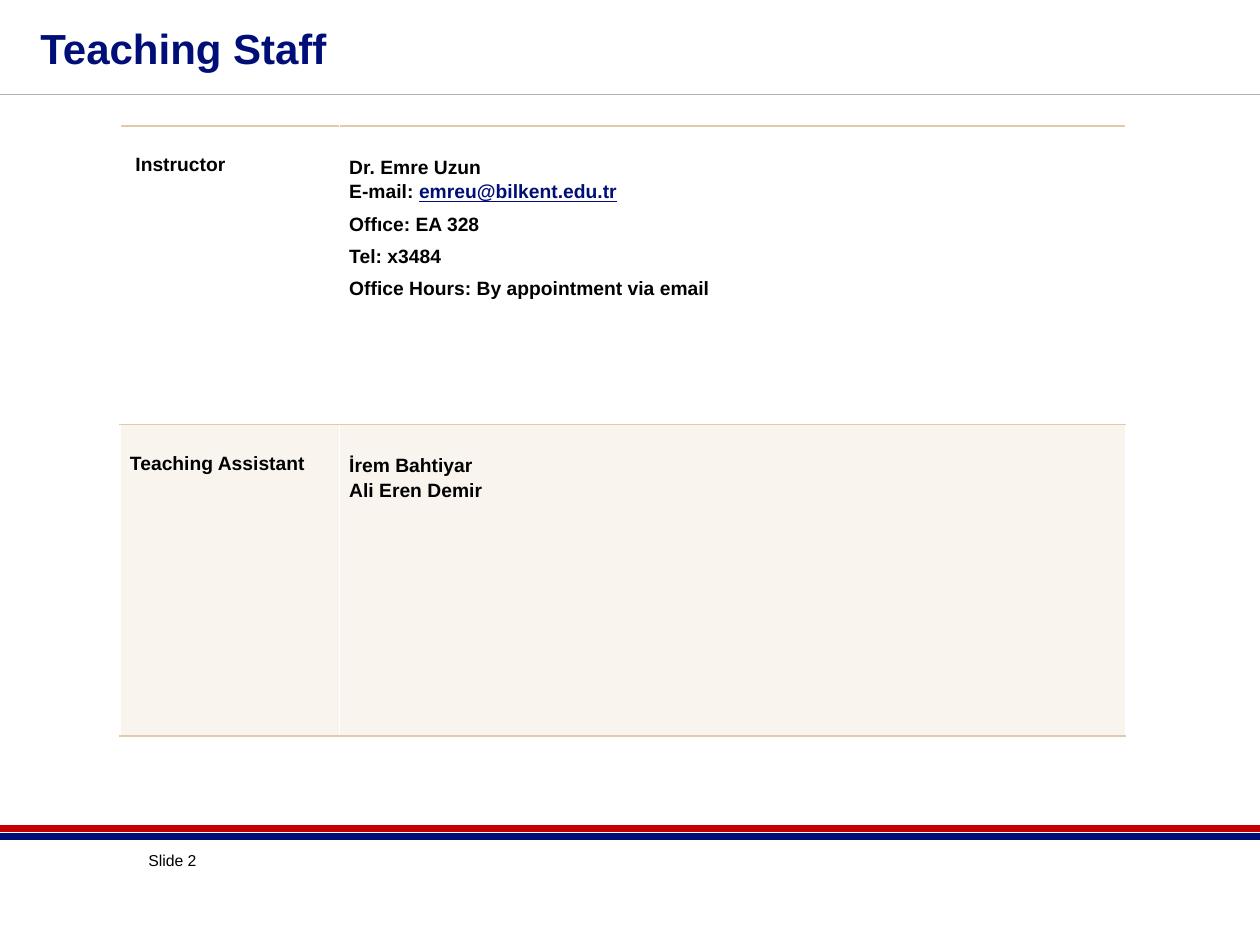
"""Build the teaching staff slide."""
from dataclasses import dataclass
from typing import NamedTuple

from lxml.etree import SubElement as Sub
from pptx import Presentation
from pptx.dml.color import RGBColor as Rgb
from pptx.enum.shapes import MSO_CONNECTOR as Link
from pptx.enum.text import MSO_ANCHOR as Anchor, PP_ALIGN as Align
from pptx.oxml.ns import qn
from pptx.util import Cm, Pt


@dataclass(frozen=True)
class Theme:
    font: str = "Arial"
    ink: str = "000000"
    navy: str = "000E78"
    red: str = "C40000"
    gray: str = "B0B2B4"
    sand: str = "E2CAAA"
    tint: int = 20
    head: float = 24
    body: float = 11
    foot: float = 9


class Rule(NamedTuple):
    top: float
    color: str
    width: float


class Line(NamedTuple):
    text: str
    gap: float = 1.15
    mail: str = ""


class Staff(NamedTuple):
    role: str
    inset: float
    high: float
    tinted: bool
    lines: tuple[Line, ...]


THEME = Theme()
WIDE, HIGH = 25.4, 19.05
COLS = (4.42, 15.85)
SIDE = 0.2
RULES = (
    Rule(1.9, THEME.gray, 0.75),
    Rule(16.71, THEME.red, 4),
    Rule(16.87, THEME.navy, 4),
)
STAFF = (
    Staff("Instructor", 0.31, 6.02, False, (
        Line("Dr. Emre Uzun"),
        Line("E-mail: ", mail="emreu@bilkent.edu.tr"),
        Line("Offıce: EA 328", 1.5),
        Line("Tel: x3484", 1.5),
        Line("Office Hours: By appointment via email", 1.5),
    )),
    Staff("Teaching Assistant", SIDE, 6.28, True, (
        Line("İrem Bahtiyar"),
        Line("Ali Eren Demir"),
    )),
)


def style(font, size: float, color: str, bold: bool = False) -> None:
    """Set the face, size, colour and weight of a font."""
    font.name, font.size, font.bold = THEME.font, Pt(size), bold
    font.color.rgb = Rgb.from_string(color)


def draw_rule(slide, rule: Rule) -> None:
    """Draw a line across the whole slide."""
    top = Cm(rule.top)
    line = slide.shapes.add_connector(Link.STRAIGHT, 0, top, Cm(WIDE), top)
    line.line.color.rgb = Rgb.from_string(rule.color)
    line.line.width = Pt(rule.width)
    Sub(line._element.spPr, qn("a:effectLst"))


def draw_title(slide, text: str) -> None:
    """Place and fill the title."""
    title = slide.shapes.title
    title.left, title.top = Cm(0.56), Cm(-0.63)
    title.width, title.height = Cm(19.76), Cm(3.17)
    frame = title.text_frame
    frame.text, frame.vertical_anchor = text, Anchor.MIDDLE
    para = frame.paragraphs[0]
    para.alignment = Align.LEFT
    style(para.font, THEME.head, THEME.navy, True)


def draw_foot(slide, text: str) -> None:
    """Write the slide number."""
    box = slide.shapes.add_textbox(Cm(2.74), Cm(17.02), Cm(2.74), Cm(0.64))
    frame = box.text_frame
    frame.word_wrap, frame.text = True, text
    style(frame.paragraphs[0].font, THEME.foot, THEME.ink)


def edge_cell(cell) -> None:
    """Rule the top and bottom of a cell."""
    props = cell._tc.get_or_add_tcPr()
    for tag in ("a:lnT", "a:lnB"):
        edge = Sub(props, qn(tag), w=str(Pt(1)))
        Sub(Sub(edge, qn("a:solidFill")), qn("a:srgbClr"), val=THEME.sand)


def fill_cell(cell, tinted: bool) -> None:
    """Tint a cell or leave it clear."""
    if not tinted:
        cell.fill.background()
        return
    cell.fill.solid()
    cell.fill.fore_color.rgb = Rgb.from_string(THEME.sand)
    color = cell._tc.tcPr.find(qn("a:solidFill"))[0]
    Sub(color, qn("a:alpha"), val=str(THEME.tint * 1000))


def write_cell(cell, lines: tuple[Line, ...], left: float, top: float) -> None:
    """Write lines of bold text into a cell."""
    cell.margin_left, cell.margin_right = Cm(left), Cm(SIDE)
    cell.margin_top, cell.margin_bottom = Cm(top), 0
    frame = cell.text_frame
    for spot, line in enumerate(lines):
        para = frame.add_paragraph() if spot else frame.paragraphs[0]
        para.line_spacing = line.gap
        style(para.font, THEME.body, THEME.ink, True)
        para.add_run().text = line.text
        if line.mail:
            run = para.add_run()
            run.text = line.mail
            run.font.underline = True
            run.font.color.rgb = Rgb.from_string(THEME.navy)


def draw_table(slide, staff: tuple[Staff, ...]) -> None:
    """Draw the table of staff."""
    high = sum(row.high for row in staff)
    table = slide.shapes.add_table(len(staff), len(COLS), Cm(2.42), Cm(2.54),
                                   Cm(sum(COLS)), Cm(high)).table
    table.first_row = table.horz_banding = False
    for col, wide in zip(table.columns, COLS):
        col.width = Cm(wide)
    for spot, row in enumerate(staff):
        table.rows[spot].height = Cm(row.high)
        role, facts = table.cell(spot, 0), table.cell(spot, 1)
        write_cell(role, (Line(row.role),), row.inset, 0.5)
        write_cell(facts, row.lines, SIDE, 0.56)
        for cell in (role, facts):
            edge_cell(cell)
            fill_cell(cell, row.tinted)


def main() -> None:
    """Build and save the slide."""
    deck = Presentation()
    deck.slide_width, deck.slide_height = Cm(WIDE), Cm(HIGH)
    slide = deck.slides.add_slide(deck.slide_layouts[5])
    for rule in RULES:
        draw_rule(slide, rule)
    draw_foot(slide, "Slide 2")
    draw_title(slide, "Teaching Staff")
    draw_table(slide, STAFF)
    deck.save("out.pptx")


if __name__ == "__main__":
    main()
